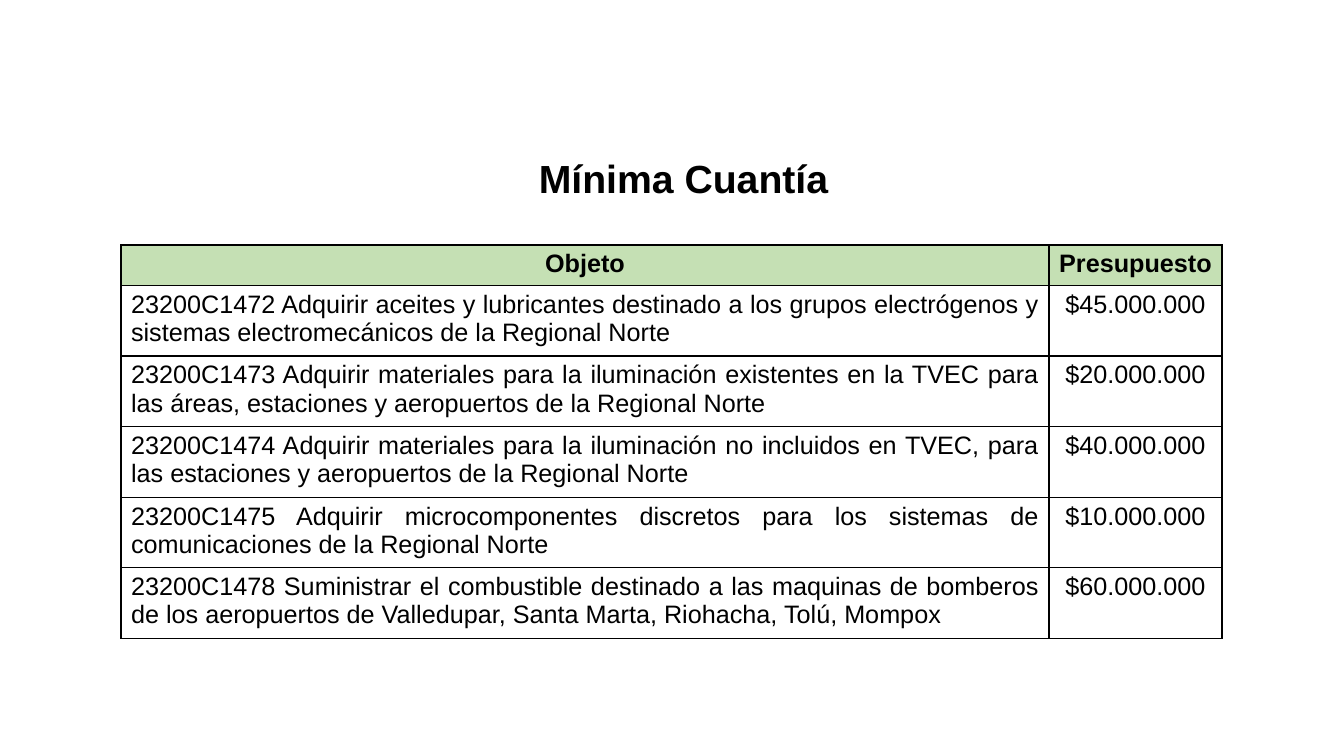
"""Builds the "Mínima Cuantía" slide: a heading above a table of contracts and budgets."""
import pptx
import pptx.dml.color
import pptx.enum.text
import pptx.oxml
import pptx.oxml.ns
import pptx.util

PX = 12192000 / 1344
COLORS = {"text": "000000", "border": "000000", "header": "C5E0B4"}
ALIGN = pptx.enum.text.PP_ALIGN
HEADER_HEIGHT, BODY_HEIGHT = 40, 353
COLUMN_WIDTHS = [928, 173]
ROWS = [
    ("Objeto", "Presupuesto"),
    ("23200C1472 Adquirir aceites y lubricantes destinado a los grupos electrógenos y "
     "sistemas electromecánicos de la Regional Norte", "$45.000.000"),
    ("23200C1473 Adquirir materiales para la iluminación existentes en la TVEC para "
     "las áreas, estaciones y aeropuertos de la Regional Norte", "$20.000.000"),
    ("23200C1474 Adquirir materiales para la iluminación no incluidos en TVEC, para "
     "las estaciones y aeropuertos de la Regional Norte", "$40.000.000"),
    ("23200C1475 Adquirir microcomponentes discretos para los sistemas de "
     "comunicaciones de la Regional Norte", "$10.000.000"),
    ("23200C1478 Suministrar el combustible destinado a las maquinas de bomberos "
     "de los aeropuertos de Valledupar, Santa Marta, Riohacha, Tolú, Mompox", "$60.000.000"),
]


def px(length):
    return pptx.util.Emu(round(length * PX))


def write(text_frame, text, size, bold, alignment):
    paragraph = text_frame.paragraphs[0]
    paragraph.text = text
    paragraph.alignment = alignment
    paragraph.font.name = "Arial"
    paragraph.font.size = pptx.util.Pt(size)
    paragraph.font.bold = bold
    paragraph.font.color.rgb = pptx.dml.color.RGBColor.from_string(COLORS["text"])


presentation = pptx.Presentation()
presentation.slide_width = px(1344)
presentation.slide_height = px(756)
slide = presentation.slides.add_slide(presentation.slide_layouts[6])

heading = slide.shapes.add_textbox(px(144), px(149), px(1079), px(57))
heading.text_frame.word_wrap = True
write(heading.text_frame, "Mínima Cuantía", 28, True, ALIGN.CENTER)

table = slide.shapes.add_table(
    len(ROWS), len(COLUMN_WIDTHS), px(121), px(245),
    px(sum(COLUMN_WIDTHS)), px(HEADER_HEIGHT + BODY_HEIGHT)).table
table.first_row = False
table.horz_banding = False
for column, width in zip(table.columns, COLUMN_WIDTHS):
    column.width = px(width)

for row_index, texts in enumerate(ROWS):
    is_header = row_index == 0
    table.rows[row_index].height = px(HEADER_HEIGHT if is_header else BODY_HEIGHT / (len(ROWS) - 1))
    for column_index, text in enumerate(texts):
        cell = table.cell(row_index, column_index)
        centered = is_header or column_index == 1
        write(cell.text_frame, text, 18, is_header, ALIGN.CENTER if centered else ALIGN.JUSTIFY)
        if is_header:
            cell.fill.solid()
            cell.fill.fore_color.rgb = pptx.dml.color.RGBColor.from_string(COLORS["header"])
        else:
            cell.fill.background()
        properties = cell._tc.get_or_add_tcPr()
        for position, side in enumerate(("lnL", "lnR", "lnT", "lnB")):
            properties.insert(position, pptx.oxml.parse_xml(
                f'<a:{side} {pptx.oxml.ns.nsdecls("a")} w="{pptx.util.Pt(1)}"><a:solidFill>'
                f'<a:srgbClr val="{COLORS["border"]}"/></a:solidFill></a:{side}>'))

presentation.save("out.pptx")
